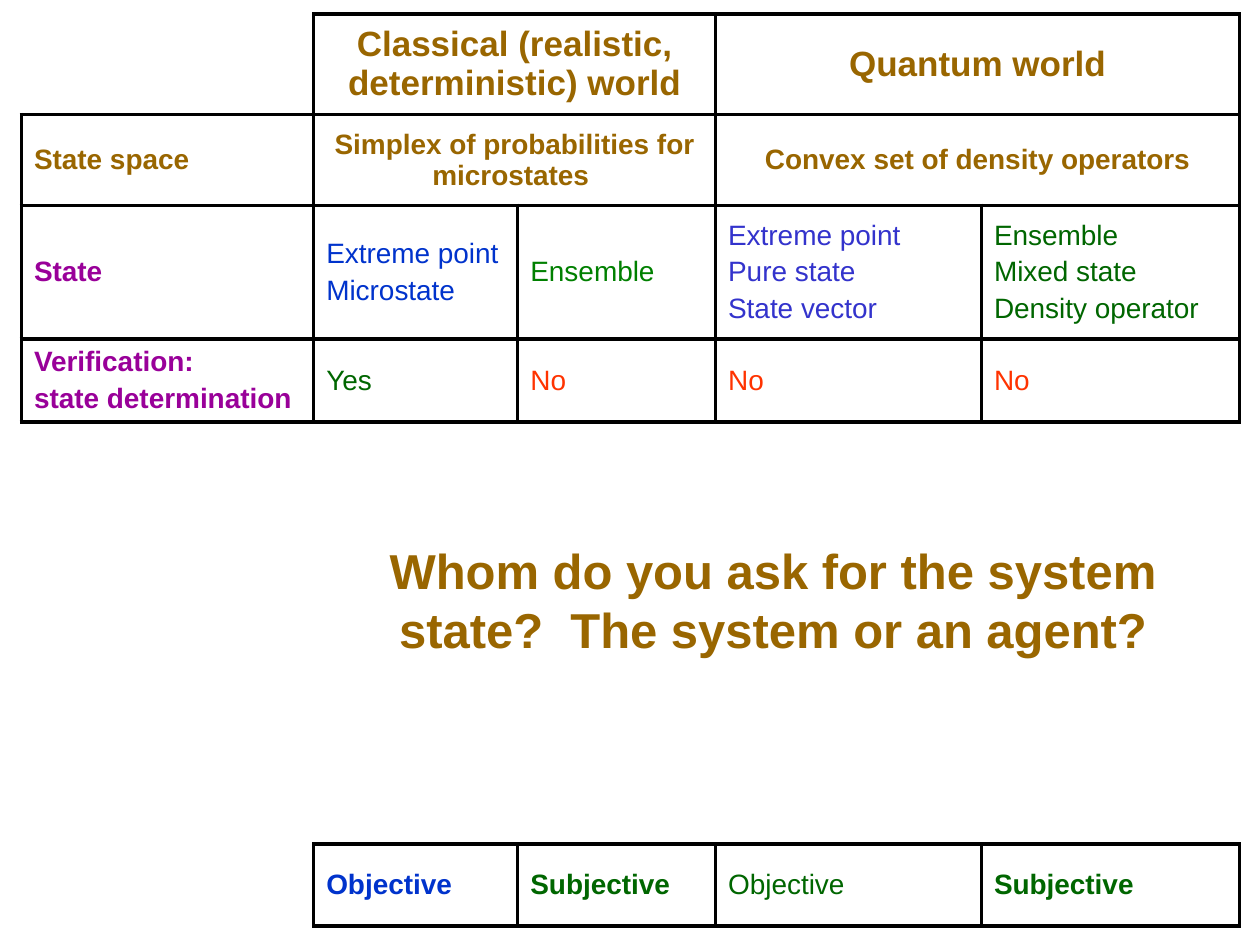
from lxml import etree
from pptx import Presentation
from pptx import util as u
from pptx.dml.color import RGBColor
from pptx.enum import text
from pptx.oxml import ns

COLORS = {"black": "000000", "gold": "996600", "purple": "990099",
          "blue": "0033CC", "indigo": "3333CC", "green": "008000",
          "dark_green": "006600", "red": "FF3300"}
FONT = "Arial"
LEFT = 0.17
COLUMNS = [2.32, 1.62, 1.57, 2.11, 2.05]

# Content: each cell is (column, columns spanned, lines, size, color, bold)
COMPARISON = [
    (0.8, [(1, 2, ["Classical (realistic, deterministic) world"], 20, "gold", True),
           (3, 2, ["Quantum world"], 20, "gold", True)]),
    (0.72, [(0, 1, ["State space"], 16, "gold", True),
            (1, 2, ["Simplex of probabilities for microstates "], 16, "gold", True),
            (3, 2, ["Convex set of density operators"], 16, "gold", True)]),
    (1.06, [(0, 1, ["State"], 16, "purple", True),
            (1, 1, ["Extreme point", "Microstate"], 16, "blue", False),
            (2, 1, ["Ensemble"], 16, "green", False),
            (3, 1, ["Extreme point", "Pure state", "State vector"], 16, "indigo", False),
            (4, 1, ["Ensemble", "Mixed state", "Density operator"], 16, "dark_green", False)]),
    (0.66, [(0, 1, ["Verification:", "state determination"], 16, "purple", True),
            (1, 1, ["Yes"], 16, "dark_green", False),
            (2, 1, ["No"], 16, "red", False),
            (3, 1, ["No"], 16, "red", False),
            (4, 1, ["No"], 16, "red", False)]),
]
VERDICT = [
    (0.65, [(1, 1, ["Objective"], 16, "blue", True),
            (2, 1, ["Subjective"], 16, "dark_green", True),
            (3, 1, ["Objective"], 16, "dark_green", False),
            (4, 1, ["Subjective"], 16, "dark_green", True)]),
]
QUESTION = "Whom do you ask for the system state?  The system or an agent?"


def add_run(paragraph, words, size, color, bold):
    run = paragraph.add_run()
    run.text = words
    run.font.name = FONT
    run.font.size = u.Pt(size)
    run.font.bold = bold
    run.font.color.rgb = RGBColor.from_string(COLORS[color])


def set_borders(cell, visible):
    properties = cell._tc.get_or_add_tcPr()
    for side in "LRTB":
        line = etree.SubElement(properties, ns.qn(f"a:ln{side}"), w=str(u.Pt(2.25)))
        if side in visible:
            fill = etree.SubElement(line, ns.qn("a:solidFill"))
            etree.SubElement(fill, ns.qn("a:srgbClr"), val=COLORS["black"])
        else:
            etree.SubElement(line, ns.qn("a:noFill"))


def space_before(paragraph, percent):
    spacing = etree.SubElement(paragraph._p.get_or_add_pPr(), ns.qn("a:spcBef"))
    etree.SubElement(spacing, ns.qn("a:spcPct"), val=str(percent * 1000))


def add_grid(slide, top, rows, corner_sides):
    height = sum(row_height for row_height, _ in rows)
    table = slide.shapes.add_table(
        len(rows), len(COLUMNS), u.Inches(LEFT), u.Inches(top),
        u.Inches(sum(COLUMNS)), u.Inches(height)).table
    table.first_row = table.horz_banding = False
    for column, width in zip(table.columns, COLUMNS):
        column.width = u.Inches(width)

    # Borders: the empty top-left corner keeps only its shared sides
    for r, (row_height, _) in enumerate(rows):
        table.rows[r].height = u.Inches(row_height)
        for c in range(len(COLUMNS)):
            cell = table.cell(r, c)
            set_borders(cell, corner_sides if r == c == 0 else "LRTB")
            cell.fill.background()

    # Cell text: spanning cells are centred
    for r, (_, cells) in enumerate(rows):
        for c, span, lines, size, color, bold in cells:
            cell = table.cell(r, c)
            if span > 1:
                cell.merge(table.cell(r, c + span - 1))
            cell.vertical_anchor = text.MSO_ANCHOR.MIDDLE
            frame = cell.text_frame
            for i, words in enumerate(lines):
                paragraph = frame.add_paragraph() if i else frame.paragraphs[0]
                if span > 1:
                    paragraph.alignment = text.PP_ALIGN.CENTER
                space_before(paragraph, 20)
                add_run(paragraph, words, size, color, bold)


def main():
    presentation = Presentation()
    presentation.slide_width, presentation.slide_height = u.Inches(10), u.Inches(7.5)
    slide = presentation.slides.add_slide(presentation.slide_layouts[6])

    # Comparison above, verdict below
    add_grid(slide, 0.11, COMPARISON, "RB")
    add_grid(slide, 6.7, VERDICT, "R")

    # Question between the tables
    box = slide.shapes.add_textbox(u.Inches(2.7), u.Inches(4.24), u.Inches(6.87), u.Inches(1.04))
    frame = box.text_frame
    frame.word_wrap = True
    frame.auto_size = text.MSO_AUTO_SIZE.SHAPE_TO_FIT_TEXT
    paragraph = frame.paragraphs[0]
    paragraph.alignment = text.PP_ALIGN.CENTER
    add_run(paragraph, QUESTION, 28, "gold", True)

    presentation.save("out.pptx")


if __name__ == "__main__":
    main()
